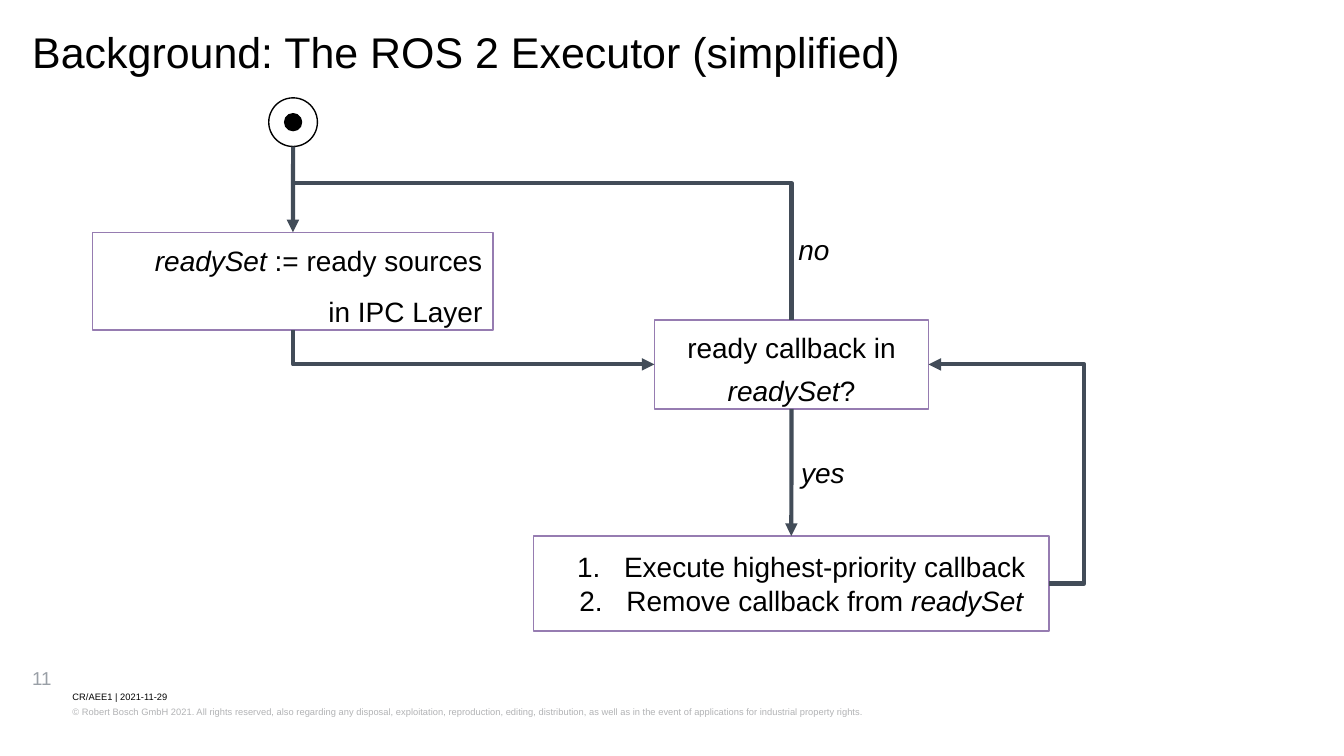
"""Builds a slide with a flowchart of the simplified ROS 2 executor."""
from lxml import etree
from pptx import Presentation
from pptx import util as u
from pptx.dml.color import RGBColor
from pptx.enum import shapes, text
from pptx.oxml import ns

BLACK = RGBColor(0x00, 0x00, 0x00)
PURPLE = RGBColor(0x96, 0x7C, 0xB1)
SLATE = RGBColor(0x42, 0x4C, 0x58)
PAGE_GRAY = RGBColor(0x99, 0x9F, 0xA6)
LEGAL_GRAY = RGBColor(0xB2, 0xB3, 0xB5)
CENTER, RIGHT = text.PP_ALIGN.CENTER, text.PP_ALIGN.RIGHT


class Flowchart:
    def __init__(self, slide):
        self.slide = slide
        self.font_name = "Arial"
        self.body_size = 15
        self.outline = u.Pt(0.75)
        self.arrow_width = u.Pt(2.25)

    def fill_text(self, shape, paragraphs, size=None, color=BLACK, spacing=1.28, align=None,
                  inset_right=0, gap=0, numbered=False, wrap=True,
                  anchor=text.MSO_ANCHOR.TOP):
        frame = shape.text_frame
        frame_format = {"margin_left": 0, "margin_top": 0, "margin_bottom": 0,
                        "margin_right": u.Cm(inset_right), "word_wrap": wrap,
                        "vertical_anchor": anchor}
        for name, value in frame_format.items():
            setattr(frame, name, value)
        for index, runs in enumerate(paragraphs):
            paragraph = frame.add_paragraph() if index else frame.paragraphs[0]
            if numbered:
                self.number(paragraph)
            paragraph_format = {"alignment": align, "line_spacing": spacing,
                                "space_before": u.Pt(gap if index else 0)}
            for name, value in paragraph_format.items():
                setattr(paragraph, name, value)
            for words, italic in runs:
                run = paragraph.add_run()
                run.text = words
                font_format = {"name": self.font_name, "italic": italic,
                               "size": u.Pt(size or self.body_size)}
                for name, value in font_format.items():
                    setattr(run.font, name, value)
                run.font.color.rgb = color

    def number(self, paragraph):
        properties = paragraph._p.get_or_add_pPr()
        properties.set("marL", str(u.Cm(1.27)))
        properties.set("indent", str(u.Cm(-0.89)))
        bullet_color = etree.SubElement(properties, ns.qn("a:buClr"))
        etree.SubElement(bullet_color, ns.qn("a:srgbClr"), val=str(BLACK))
        etree.SubElement(properties, ns.qn("a:buFont"), typeface=self.font_name)
        etree.SubElement(properties, ns.qn("a:buAutoNum"), type="arabicPeriod")

    def label(self, bounds, words, italic=False, **style):
        box = self.slide.shapes.add_textbox(*map(u.Cm, bounds))
        self.fill_text(box, [[(words, italic)]], **style)

    def shape(self, kind, bounds, line, fill=None):
        shape = self.slide.shapes.add_shape(kind, *map(u.Cm, bounds))
        shape.shadow.inherit = False
        if fill is None:
            shape.fill.background()
        else:
            shape.fill.solid()
            shape.fill.fore_color.rgb = fill
        shape.line.color.rgb = line
        shape.line.width = self.outline
        return shape

    def box(self, bounds, paragraphs, **style):
        box = self.shape(shapes.MSO_SHAPE.RECTANGLE, bounds, PURPLE)
        self.fill_text(box, paragraphs, anchor=text.MSO_ANCHOR.MIDDLE, **style)
        return box

    def circle(self, center_x, center_y, diameter, fill=None):
        bounds = (center_x - diameter / 2, center_y - diameter / 2, diameter, diameter)
        self.shape(shapes.MSO_SHAPE.OVAL, bounds, BLACK, fill)

    def connector(self, start, end, arrow="tailEnd", preset=None, bend=None):
        kind = shapes.MSO_CONNECTOR.ELBOW if preset else shapes.MSO_CONNECTOR.STRAIGHT
        connector = self.slide.shapes.add_connector(kind, *map(u.Cm, start + end))
        connector.line.color.rgb = SLATE
        connector.line.width = self.arrow_width
        properties = connector._element.spPr
        if preset:
            geometry = properties.find(ns.qn("a:prstGeom"))
            geometry.set("prst", preset)
            if bend is not None:
                guides = geometry.find(ns.qn("a:avLst"))
                etree.SubElement(guides, ns.qn("a:gd"), name="adj1", fmla=f"val {bend}")
        if arrow:
            outline = properties.find(ns.qn("a:ln"))
            etree.SubElement(outline, ns.qn(f"a:{arrow}"), type="triangle")
        etree.SubElement(properties, ns.qn("a:effectLst"))
        return connector


def main():
    presentation = Presentation()
    presentation.slide_width, presentation.slide_height = u.Cm(25.4), u.Cm(14.29)
    chart = Flowchart(presentation.slides.add_slide(presentation.slide_layouts[6]))

    chart.label((1.37, 13.06, 21.18, 0.25), "CR/AEE1 | 2021-11-29", size=5, spacing=1.07)
    chart.label((1.37, 13.31, 21.18, 0.51),
                "© Robert Bosch GmbH 2021. All rights reserved, also regarding any disposal, "
                "exploitation, reproduction, editing, distribution, as well as in the event of "
                "applications for industrial property rights.",
                size=5, color=LEGAL_GRAY, spacing=1.2)
    chart.label((0.61, 0.61, 24.21, 0.89), "Background: The ROS 2 Executor (simplified)",
                size=23, spacing=0.89)
    chart.label((0.61, 12.6, 0.66, 0.94), "11", size=10, color=PAGE_GRAY, spacing=1.0)

    decision = chart.box((12.37, 6.05, 5.18, 1.68),
                         [[("ready callback in ", False), ("readySet", True), ("?", False)]],
                         align=CENTER)
    collect = chart.box((1.75, 4.39, 7.57, 1.85),
                        [[("readySet", True), (" := ready sources", False)],
                         [("in IPC Layer", False)]],
                        align=RIGHT, inset_right=0.2, gap=4)
    execute = chart.box((10.08, 10.13, 9.75, 1.8),
                        [[("Execute highest-priority callback", False)],
                         [("Remove callback from ", False), ("readySet", True)]],
                        align=CENTER, spacing=1.0, numbered=True)
    chart.label((15.14, 8.43, 0.91, 0.69), "yes", italic=True, wrap=False)
    chart.label((15.09, 4.22, 1.04, 0.71), "no", italic=True, wrap=False)

    chart.circle(5.54, 2.31, 0.92)
    chart.circle(5.54, 2.31, 0.32, fill=BLACK)

    yes_arrow = chart.connector((14.96, 7.73), (14.96, 10.13))
    yes_arrow.begin_connect(decision, 2)
    yes_arrow.end_connect(execute, 0)
    start_arrow = chart.connector((5.54, 2.77), (5.54, 4.39))
    start_arrow.end_connect(collect, 0)
    chart.connector((12.37, 6.89), (5.54, 6.24), arrow="headEnd", preset="bentConnector2")
    chart.connector((19.83, 11.03), (17.55, 6.89), preset="bentConnector3", bend=-29100)
    chart.connector((5.54, 3.46), (14.96, 6.05), arrow=None, preset="bentConnector2")

    presentation.save("out.pptx")


if __name__ == "__main__":
    main()
